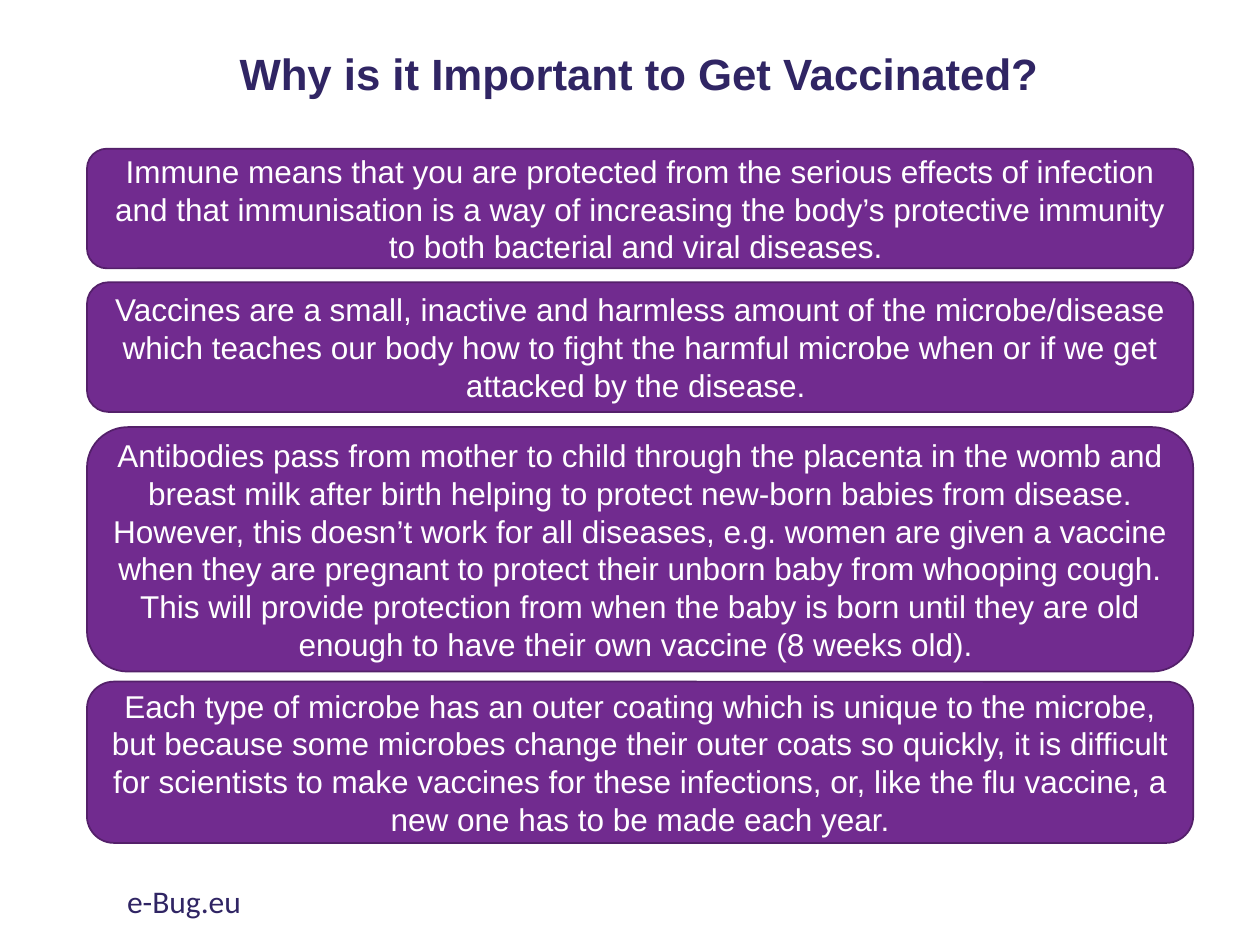
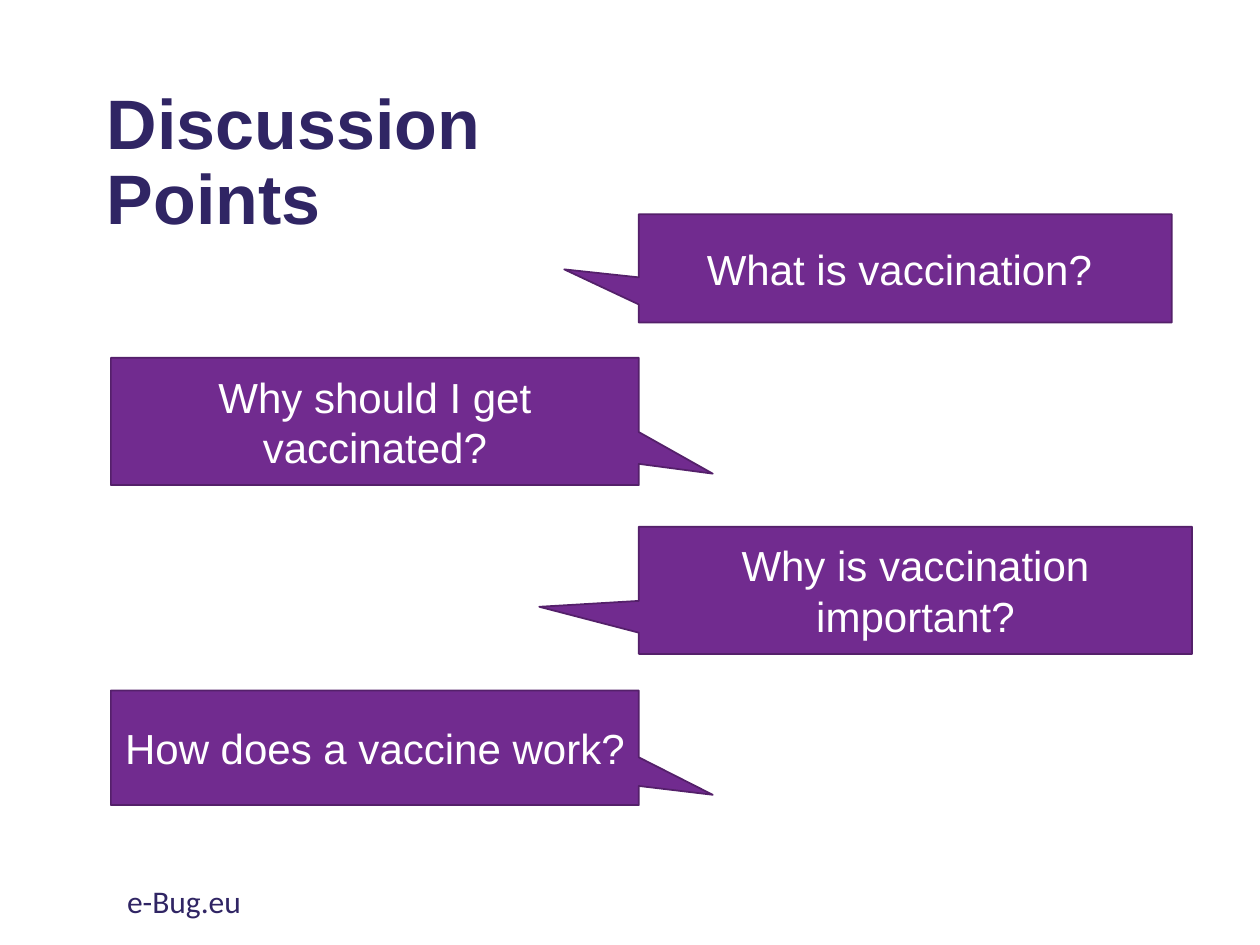
from pptx import Presentation
from pptx.dml.color import RGBColor
from pptx.enum.shapes import MSO_SHAPE as Shape
from pptx.enum.text import MSO_ANCHOR as Anchor, PP_ALIGN as Align
from pptx.util import Inches, Pt

NAVY = RGBColor(0x30, 0x25, 0x64)
PURPLE = RGBColor(0x71, 0x2B, 0x8F)
DARK_PURPLE = RGBColor(0x54, 0x20, 0x6A)
WHITE = RGBColor(0xFF, 0xFF, 0xFF)
HEADING_FONT = "Arial"
FOOTER_FONT = "Calibri"

FACT_LEFT, FACT_WIDTH = 0.69, 8.78
# top, height, text
FACTS = [
    (1.18, 0.95, "Immune means that you are protected from the serious effects of "
     "infection and that immunisation is a way of increasing the body’s protective "
     "immunity to both bacterial and viral diseases. "),
    (2.24, 1.03, "Vaccines are a small, inactive and harmless amount of the "
     "microbe/disease which teaches our body how to fight the harmful microbe when "
     "or if we get attacked by the disease. "),
    (3.39, 1.94, "Antibodies pass from mother to child through the placenta in the "
     "womb and breast milk after birth helping to protect new-born babies from "
     "disease. However, this doesn’t work for all diseases, e.g. women are given a "
     "vaccine when they are pregnant to protect their unborn baby from whooping "
     "cough. This will provide protection from when the baby is born until they are "
     "old enough to have their own vaccine (8 weeks old). "),
    (5.41, 1.28, "Each type of microbe has an outer coating which is unique to the "
     "microbe, but because some microbes change their outer coats so quickly, it is "
     "difficult for scientists to make vaccines for these infections, or, like the "
     "flu vaccine, a new one has to be made each year."),
]

LEFT_COLUMN, RIGHT_COLUMN = 0.88, 5.07
LEFT_WIDTH = RIGHT_COLUMN - LEFT_COLUMN
RIGHT_TAIL = (0.64, 0.41)
# left, top, width, height, tail tip relative to the centre, text
QUESTIONS = [
    (RIGHT_COLUMN, 1.7, 4.23, 0.86, (-0.64, 0.01), "What is vaccination? "),
    (LEFT_COLUMN, 2.84, LEFT_WIDTH, 1.01, RIGHT_TAIL, "Why should I get vaccinated?"),
    (RIGHT_COLUMN, 4.18, 4.39, 1.01, (-0.68, 0.13), "Why is vaccination important?"),
    (LEFT_COLUMN, 5.48, LEFT_WIDTH, 0.91, RIGHT_TAIL, "How does a vaccine work?"),
]


def write(shape, text, size, color, font=HEADING_FONT, bold=False,
          align=Align.LEFT, anchor=Anchor.MIDDLE):
    """Put one wrapped paragraph in the shape and return the paragraph."""
    frame = shape.text_frame
    frame.word_wrap = True
    frame.vertical_anchor = anchor
    paragraph = frame.paragraphs[0]
    paragraph.alignment = align
    run = paragraph.add_run()
    run.text = text
    run.font.name = font
    run.font.size = Pt(size)
    run.font.bold = bold
    run.font.color.rgb = color
    return paragraph


def add_title(slide, box, text, size, align=Align.LEFT):
    title = slide.shapes.add_textbox(*map(Inches, box))
    write(title, text, size, NAVY, bold=True, align=align).line_spacing = 0.9


def add_footer(slide):
    footer = slide.shapes.add_textbox(*map(Inches, (0.91, 6.95, 3.38, 0.4)))
    write(footer, "e-Bug.eu", 18, NAVY, font=FOOTER_FONT, anchor=Anchor.TOP)


def add_panel(slide, preset, box, text, size):
    """Add a purple shape with centred white text."""
    panel = slide.shapes.add_shape(preset, *map(Inches, box))
    panel.shadow.inherit = False
    panel.fill.solid()
    panel.fill.fore_color.rgb = PURPLE
    panel.line.color.rgb = DARK_PURPLE
    panel.line.width = Pt(1)
    write(panel, text, size, WHITE, align=Align.CENTER)
    return panel


def add_callout(slide, box, tail, text):
    callout = add_panel(slide, Shape.RECTANGULAR_CALLOUT, box, text, 24)
    callout.adjustments[0], callout.adjustments[1] = tail


def add_slide(deck):
    slide = deck.slides.add_slide(deck.slide_layouts[6])
    add_footer(slide)
    return slide


def build_importance(deck):
    slide = add_slide(deck)
    add_title(slide, (0.76, 0.3, 8.62, 0.61),
              "Why is it Important to Get Vaccinated?", 25, Align.CENTER)
    for top, height, fact in FACTS:
        add_panel(slide, Shape.ROUNDED_RECTANGLE,
                  (FACT_LEFT, top, FACT_WIDTH, height), fact, 18)


def build_discussion(deck):
    slide = add_slide(deck)
    add_title(slide, (0.75, 0.58, 4.25, 1.45), "Discussion Points", 40)
    for *box, tail, question in QUESTIONS:
        add_callout(slide, box, tail, question)


def main():
    deck = Presentation()
    deck.slide_width, deck.slide_height = Inches(10), Inches(7.5)
    build_importance(deck)
    build_discussion(deck)
    deck.save("out.pptx")


if __name__ == "__main__":
    main()
